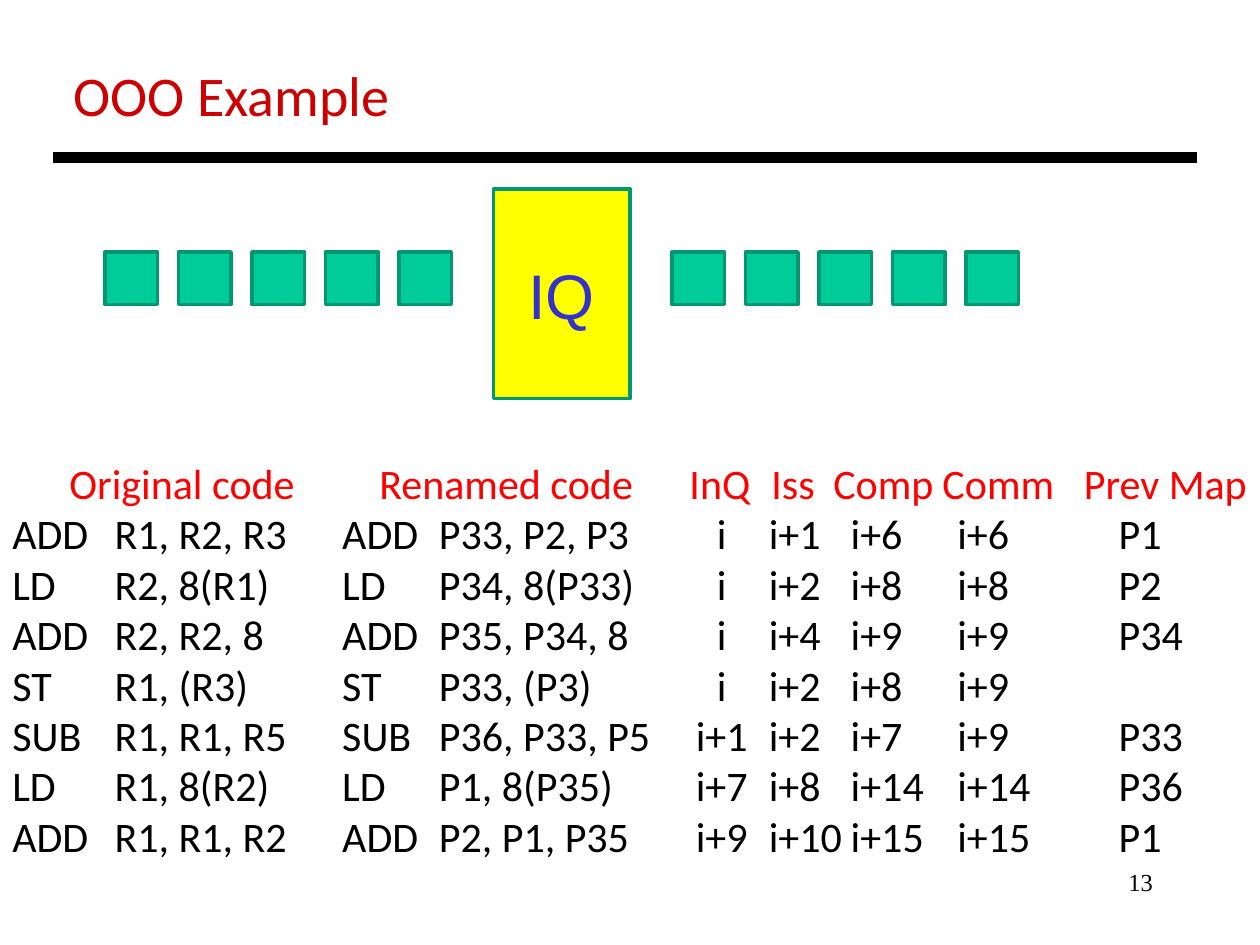
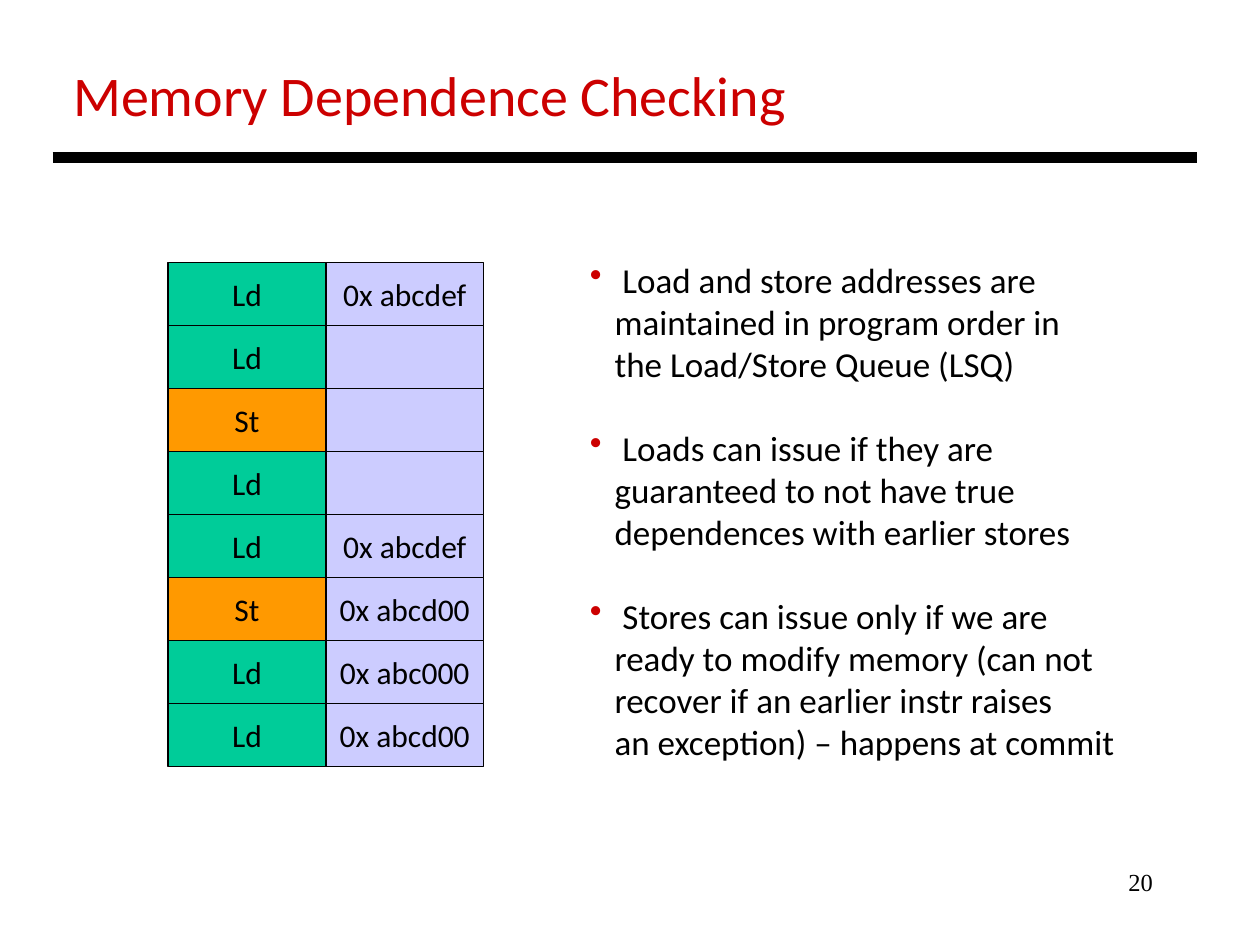
from dataclasses import dataclass

import lxml.etree
import pptx
import pptx.dml.color
import pptx.enum.shapes
import pptx.enum.text
import pptx.oxml.ns
import pptx.util

Cm = pptx.util.Cm
Pt = pptx.util.Pt
Align = pptx.enum.text.PP_ALIGN
Anchor = pptx.enum.text.MSO_ANCHOR
qn = pptx.oxml.ns.qn

BLACK, WHITE = "000000", "FFFFFF"
CRIMSON, RED = "CC0000", "FF0000"
GREEN, PINE = "00CC99", "009771"
ORANGE, LILAC = "FF9900", "CCCCFF"
YELLOW, BLUE = "FFFF00", "3333CC"


@dataclass
class Box:
    """A rectangle; lengths are centimetres, the line width is points."""
    left: float
    top: float
    width: float
    height: float
    fill: str = GREEN
    line: str = PINE
    weight: float = 2

    def place(self) -> tuple:
        return Cm(self.left), Cm(self.top), Cm(self.width), Cm(self.height)


@dataclass
class Stop:
    """A tab stop, in centimetres from the text edge."""
    at: float
    align: str = "l"


@dataclass
class Entry:
    """One load or store in the queue."""
    kind: str
    address: str = ""


HEAD_STOPS = [Stop(x) for x in (1.15, 7.4, 13.65, 15.3, 16.55, 18.75, 21.6)]
CODE_STOPS = [Stop(2.06), Stop(6.65), Stop(8.6), Stop(14.3, "ctr"),
              Stop(15.25), Stop(16.9), Stop(19.05), Stop(22.3)]
HEADS = ["", "Original code", "Renamed code", "InQ", "Iss", "Comp", "Comm",
         "Prev Map"]
CODE = [
    ("ADD", "R1, R2, R3", "ADD", "P33, P2, P3", "i", "i+1", "i+6", "i+6", "P1"),
    ("LD", "R2, 8(R1)", "LD", "P34, 8(P33)", "i", "i+2", "i+8", "i+8", "P2"),
    ("ADD", "R2, R2, 8", "ADD", "P35, P34, 8", "i", "i+4", "i+9", "i+9", "P34"),
    ("ST", "R1, (R3)", "ST", "P33, (P3)", "i", "i+2", "i+8", "i+9"),
    ("SUB", "R1, R1, R5", "SUB", "P36, P33, P5", "i+1", "i+2", "i+7", "i+9", "P33"),
    ("LD", "R1, 8(R2)", "LD", "P1, 8(P35)", "i+7", "i+8", "i+14", "i+14", "P36"),
    ("ADD", "R1, R1, R2", "ADD", "P2, P1, P35", "i+9", "i+10", "i+15", "i+15", "P1"),
]
QUEUE = [Entry("Ld", "0x abcdef"), Entry("Ld"), Entry("St"), Entry("Ld"),
         Entry("Ld", "0x abcdef"), Entry("St", "0x abcd00"),
         Entry("Ld", "0x abc000"), Entry("Ld", "0x abcd00")]
POINTS = [
    " Load and store addresses are\vmaintained in program order in\v"
    "the Load/Store Queue (LSQ)",
    " Loads can issue if they are\vguaranteed to not have true\v"
    "dependences with earlier stores",
    " Stores can issue only if we are\vready to modify memory (can not\v"
    "recover if an earlier instr raises\van exception) – happens at commit",
]


def rgb(code: str) -> pptx.dml.color.RGBColor:
    return pptx.dml.color.RGBColor.from_string(code)


def write(frame, text: str, *, size: float = 24, color: str = BLACK,
          font: str = "Calibri", align=Align.LEFT, before: float = 0):
    """Fill the first paragraph, or add one when it already has text."""
    para = frame.paragraphs[0]
    if para.text:
        para = frame.add_paragraph()
    para.text = text
    para.alignment = align
    para.space_before = Pt(before)
    for run in para.runs:
        run.font.size = Pt(size)
        run.font.name = font
        run.font.color.rgb = rgb(color)
    return para


def add_tabs(para, stops: list[Stop]) -> None:
    tabs = lxml.etree.SubElement(para._p.get_or_add_pPr(), qn("a:tabLst"))
    for stop in stops:
        lxml.etree.SubElement(tabs, qn("a:tab"), pos=str(Cm(stop.at)),
                              algn=stop.align)


def add_bullet(para, hang: float) -> None:
    props = para._p.get_or_add_pPr()
    props.set("marL", str(Cm(hang)))
    props.set("indent", str(-Cm(hang)))
    tint = lxml.etree.SubElement(props, qn("a:buClr"))
    lxml.etree.SubElement(tint, qn("a:srgbClr"), val=CRIMSON)
    lxml.etree.SubElement(props, qn("a:buChar"), char="•")


def add_frame(slide, left: float, top: float, width: float, height: float):
    frame = slide.shapes.add_textbox(
        Cm(left), Cm(top), Cm(width), Cm(height)).text_frame
    frame.word_wrap = True
    return frame


def add_box(slide, box: Box, text: str = "", **style) -> None:
    shape = slide.shapes.add_shape(
        pptx.enum.shapes.MSO_SHAPE.RECTANGLE, *box.place())
    shape.shadow.inherit = False
    shape.fill.solid()
    shape.fill.fore_color.rgb = rgb(box.fill)
    shape.line.color.rgb = rgb(box.line)
    shape.line.width = Pt(box.weight)
    if text:
        shape.text_frame.vertical_anchor = Anchor.MIDDLE
        shape.text_frame.word_wrap = False
        write(shape.text_frame, text, align=Align.CENTER, **style)


def add_slide(deck, title: str, width: float, number: int):
    """Add a slide with its title, rule and number."""
    slide = deck.slides.add_slide(deck.slide_layouts[5])
    slide.background.fill.solid()
    slide.background.fill.fore_color.rgb = rgb(WHITE)

    head = slide.shapes.title
    head.left, head.top = Cm(1.22), Cm(1.09)
    head.width, head.height = Cm(width), Cm(1.63)
    frame = head.text_frame
    frame.word_wrap = False
    frame.auto_size = pptx.enum.text.MSO_AUTO_SIZE.NONE
    frame.vertical_anchor = Anchor.TOP
    write(frame, title, size=32, color=CRIMSON)

    rule = slide.shapes.add_connector(
        pptx.enum.shapes.MSO_CONNECTOR.STRAIGHT,
        Cm(1.06), Cm(3.18), Cm(24.13), Cm(3.18))
    rule.line.color.rgb = rgb(BLACK)
    rule.line.width = Pt(6)
    lxml.etree.SubElement(rule._element.spPr, qn("a:effectLst"))

    write(add_frame(slide, 18.21, 17.35, 5.28, 1.27), str(number),
          size=14, font="Times New Roman", align=Align.RIGHT)
    return slide


def draw_example(deck) -> None:
    slide = add_slide(deck, "OOO Example", 6.96, 13)
    for start in (2.12, 13.55):
        for stage in range(5):
            add_box(slide, Box(start + 1.48 * stage, 5.08, 1.06, 1.06))
    add_box(slide, Box(9.95, 3.81, 2.75, 4.23, YELLOW), "IQ",
            size=36, font="Arial", color=BLUE)

    frame = add_frame(slide, 0, 9.1, 25.55, 8.46)
    add_tabs(write(frame, "\t".join(HEADS), color=RED), HEAD_STOPS)
    for row in CODE:
        add_tabs(write(frame, "\t".join(row)), CODE_STOPS)


def draw_memory(deck) -> None:
    slide = add_slide(deck, "Memory Dependence Checking", 15.04, 20)
    left, top, width, height = 3.39, 5.29, 3.18, 1.27
    fills = {"Ld": GREEN, "St": ORANGE}
    for row, entry in enumerate(QUEUE):
        cells = ((entry.kind, fills[entry.kind]), (entry.address, LILAC))
        for col, (text, fill) in enumerate(cells):
            box = Box(left + col * width, top + row * height, width, height,
                      fill, BLACK, 0.75)
            add_box(slide, box, text, size=18)

    frame = add_frame(slide, 11.64, 5.08, 11.18, 10.52)
    for index, point in enumerate(POINTS):
        para = write(frame, point, size=20, before=24 if index else 0)
        add_bullet(para, 0.5)


def main() -> None:
    deck = pptx.Presentation()
    deck.slide_width, deck.slide_height = Cm(25.4), Cm(19.05)
    draw_example(deck)
    draw_memory(deck)
    deck.save("out.pptx")


if __name__ == "__main__":
    main()
